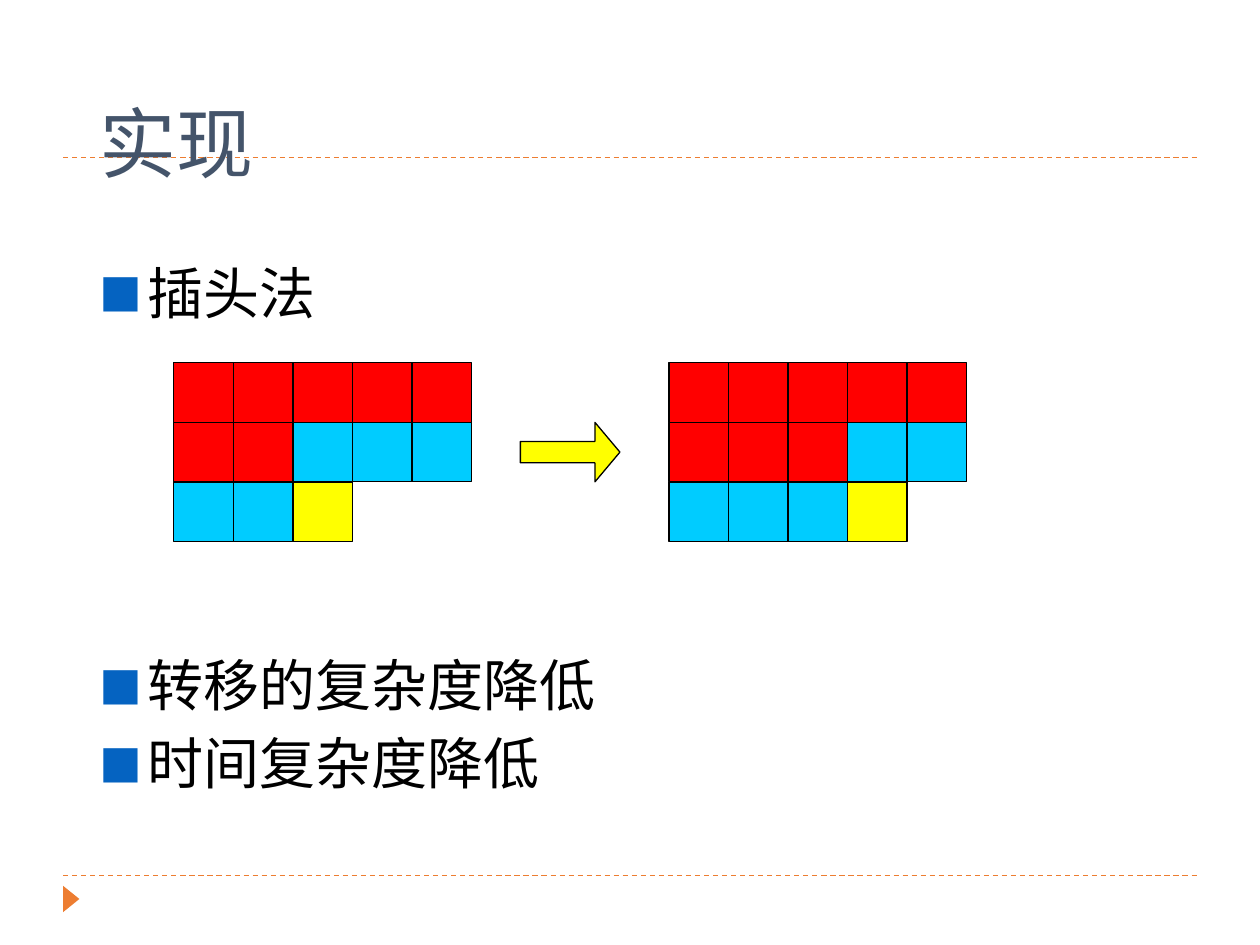
from lxml import etree
from pptx import Presentation
from pptx import util as u
from pptx.dml.color import RGBColor
from pptx.enum import dml, shapes, text
from pptx.oxml.ns import qn

RED = RGBColor(0xFF, 0x00, 0x00)
SKY = RGBColor(0x00, 0xCC, 0xFF)
YELLOW = RGBColor(0xFF, 0xFF, 0x00)
BLACK = RGBColor(0x00, 0x00, 0x00)
ORANGE = RGBColor(0xED, 0x7D, 0x31)
SLATE = RGBColor(0x44, 0x54, 0x6A)
BLUE = RGBColor(0x05, 0x63, 0xC1)

deck = Presentation()
deck.slide_width, deck.slide_height = u.Inches(10), u.Inches(7.5)
slide = deck.slides.add_slide(deck.slide_layouts[6])
KIND = shapes.MSO_SHAPE


def draw(kind, left, top, width, height, fill, line=None):
    item = slide.shapes.add_shape(
        kind, *(u.Emu(round(side)) for side in (left, top, width, height)))
    item.shadow.inherit = False
    item.fill.solid()
    item.fill.fore_color.rgb = fill
    if line is None:
        item.line.fill.background()
    else:
        item.line.color.rgb = line
        item.line.width = u.Pt(0.75)
    return item


def write(top, height, lines, size, color):
    frame = slide.shapes.add_textbox(
        u.Inches(0.69), u.Inches(top), u.Inches(8.63), u.Inches(height)).text_frame
    frame.word_wrap = True
    frame.text = "\n".join(lines)
    for para in frame.paragraphs:
        for run in para.runs:
            run.font.name = "Calibri"
            run.font.size = u.Pt(size)
            run.font.color.rgb = color
            east = etree.SubElement(run.font._element, qn("a:ea"))
            east.set("typeface", "Calibri")
    return frame


# Dashed rules above and below the content
for y in (6.95, 1.25):
    rule = slide.shapes.add_connector(
        shapes.MSO_CONNECTOR.STRAIGHT,
        u.Inches(0.5), u.Inches(y), u.Inches(9.5), u.Inches(y))
    rule.line.color.rgb = ORANGE
    rule.line.width = u.Pt(0.75)
    rule.line.dash_style = dml.MSO_LINE.DASH
    etree.SubElement(rule._element.spPr, qn("a:effectLst"))

# Footer marker
mark = draw(KIND.ISOSCELES_TRIANGLE, u.Inches(0.46), u.Inches(7.07),
            u.Inches(0.21), u.Inches(0.13), ORANGE)
mark.rotation = 90

# Title
title = write(0.4, 1.45, ["实现"], 44, SLATE)
title.vertical_anchor = text.MSO_ANCHOR.MIDDLE

# Bullets, with room for the boards after the first
body = write(2, 4.76, ["插头法", "转移的复杂度降低", "时间复杂度降低"], 32, BLACK)
for para, gap in zip(body.paragraphs, (0, 186, 6)):
    para.space_before = u.Pt(gap)
    props = para._p.get_or_add_pPr()
    props.set("marL", str(u.Inches(0.38)))
    props.set("indent", str(u.Inches(-0.38)))
    tint = etree.SubElement(props, qn("a:buClr"))
    etree.SubElement(tint, qn("a:srgbClr")).set("val", str(BLUE))
    etree.SubElement(props, qn("a:buSzPct")).set("val", "80000")
    etree.SubElement(props, qn("a:buFont")).set("typeface", "Calibri")
    etree.SubElement(props, qn("a:buChar")).set("char", "■")

# Boards before and after one step: done, frontier and current cells
cell = u.Inches(1.89) / 4
top = u.Inches(2.88)
tone = {"R": RED, "B": SKY, "Y": YELLOW}
boards = [(1.38, ("RRRRR", "RRBBB", "BBY")),
          (5.31, ("RRRRR", "RRRBB", "BBBY"))]
for left, rows in boards:
    for row, codes in enumerate(rows):
        for col, code in enumerate(codes):
            draw(KIND.RECTANGLE, u.Inches(left) + col * cell, top + row * cell,
                 cell, cell, tone[code], BLACK)

# Arrow between the boards, level with the middle row
arrow = draw(KIND.RIGHT_ARROW, u.Inches(4.13), top + cell,
             u.Inches(0.79), cell, YELLOW, BLACK)
arrow.adjustments[0] = 0.36
arrow.adjustments[1] = 0.42

deck.save("out.pptx")
